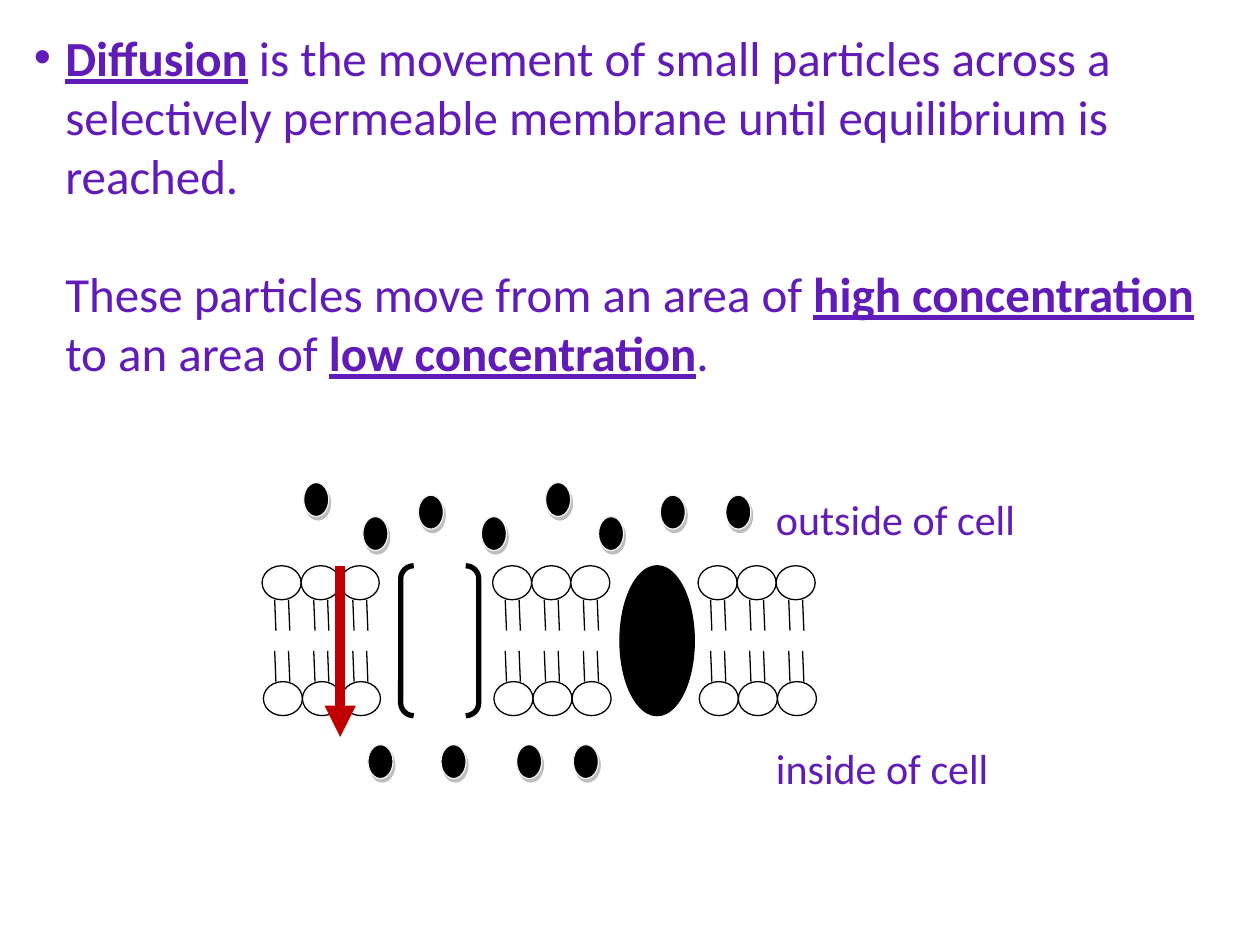
"""Build a slide that explains diffusion across a cell membrane."""
from dataclasses import dataclass

from lxml.etree import SubElement
from pptx import Presentation
from pptx.dml.color import RGBColor
from pptx.enum.shapes import MSO_CONNECTOR, MSO_SHAPE
from pptx.enum.text import MSO_ANCHOR, PP_ALIGN
from pptx.oxml.ns import qn
from pptx.util import Inches, Pt


@dataclass(frozen=True)
class Theme:
    """Colours, font and sizes of the slide."""

    text: str = "611BB8"
    ink: str = "000000"
    paper: str = "FFFFFF"
    rim: str = "F2F2F2"
    shade: str = "7F7F7F"
    arrow: str = "C00000"
    font: str = "Calibri"
    body_size: int = 28
    label_size: int = 24
    thin: float = 0.75
    bracket_line: float = 3
    arrow_line: float = 6


THEME = Theme()


def rgb(color):
    """Return the colour object for a hex string."""
    return RGBColor.from_string(color)


def add_outlined(slide, preset, box, fill, outline, width=THEME.thin):
    """Add a preset shape without a shadow; a fill of None leaves it hollow."""
    shape = slide.shapes.add_shape(preset, *map(Inches, box))
    shape.shadow.inherit = False
    if fill:
        shape.fill.solid()
        shape.fill.fore_color.rgb = rgb(fill)
    else:
        shape.fill.background()
    shape.line.color.rgb = rgb(outline)
    shape.line.width = Pt(width)
    return shape


def add_line(slide, start, end, color=THEME.ink, width=THEME.thin):
    """Add a straight line without a shadow."""
    line = slide.shapes.add_connector(
        MSO_CONNECTOR.STRAIGHT, *map(Inches, (*start, *end)))
    line.line.color.rgb = rgb(color)
    line.line.width = Pt(width)
    SubElement(line._element.spPr, qn("a:effectLst"))
    return line


def style_text(paragraph, size):
    """Give a paragraph the slide's font and text colour."""
    paragraph.font.name = THEME.font
    paragraph.font.size = Pt(size)
    paragraph.font.color.rgb = rgb(THEME.text)


def indent_paragraph(paragraph, bullet):
    """Indent a paragraph and hang a coloured bullet if one is given."""
    properties = paragraph._p.get_or_add_pPr()
    margin = Inches(0.25)
    properties.set("marL", str(margin))
    properties.set("indent", str(-margin if bullet else 0))
    if bullet:
        bullet_color = SubElement(properties, qn("a:buClr"))
        SubElement(bullet_color, qn("a:srgbClr"), val=THEME.text)
        SubElement(properties, qn("a:buFont"), typeface="Arial")
        SubElement(properties, qn("a:buChar"), char=bullet)
    else:
        SubElement(properties, qn("a:buNone"))


def add_definition(slide, box):
    """Write the definition, with its key terms bold and underlined."""
    frame = slide.shapes.add_textbox(*map(Inches, box)).text_frame
    frame.word_wrap = True
    frame.vertical_anchor = MSO_ANCHOR.TOP
    passages = (
        ("•", 0, (
            ("Diffusion", True),
            (" is the movement of small particles across a selectively "
             "permeable membrane until equilibrium is reached.", False))),
        (None, 34, (
            ("These particles move from an area of ", False),
            ("high concentration", True),
            (" to an area of ", False),
            ("low concentration", True),
            (".", False))),
    )
    for index, (bullet, gap, pieces) in enumerate(passages):
        paragraph = frame.add_paragraph() if index else frame.paragraphs[0]
        indent_paragraph(paragraph, bullet)
        paragraph.space_before = Pt(gap)
        style_text(paragraph, THEME.body_size)
        for wording, is_term in pieces:
            run = paragraph.add_run()
            run.text = wording
            run.font.bold = run.font.underline = is_term


def add_lipid(slide, left, head_top, tail_start, tail_end, lean):
    """Draw one lipid: a round head and two leaning tails."""
    add_outlined(slide, MSO_SHAPE.OVAL, (left, head_top, 0.31, 0.27),
                 THEME.paper, THEME.ink)
    for offset in (0.1, 0.21):
        tail = left + offset
        add_line(slide, (tail, tail_start), (tail + lean, tail_end))


def add_bilayer(slide, box):
    """Draw three lipid pairs whose tails face each other inside the box."""
    left, top, width, height = box
    bottom = top + height
    head, tail, lean = 0.27, 0.245, 0.01
    for index in range(3):
        lipid = left + index * width / 3
        add_lipid(slide, lipid, top, top + head, top + head + tail, lean)
        add_lipid(slide, lipid + lean, bottom - head, bottom - head,
                  bottom - head - tail, -lean)


def add_membrane(slide, box):
    """Draw the bilayers, the channel, the protein and the diffusion arrow."""
    left, top, _, height = box
    for offset in (0, 1.83, 3.46):
        add_bilayer(slide, (left + offset, top, 0.93, height))
    add_outlined(slide, MSO_SHAPE.DOUBLE_BRACKET,
                 (left + 1.1, top, 0.62, height),
                 None, THEME.ink, THEME.bracket_line)
    add_outlined(slide, MSO_SHAPE.OVAL, (left + 2.84, top, 0.59, height),
                 THEME.ink, THEME.ink)
    middle = left + 0.62
    arrow = add_line(slide, (middle, top), (middle, top + 1.36),
                     THEME.arrow, THEME.arrow_line)
    SubElement(arrow._element.spPr.find(qn("a:ln")), qn("a:tailEnd"),
               type="triangle")


def add_particle(slide, left, top):
    """Draw one particle with a hard offset shadow."""
    particle = add_outlined(slide, MSO_SHAPE.OVAL, (left, top, 0.2, 0.27),
                            THEME.ink, THEME.rim)
    effects = particle._element.spPr.find(qn("a:effectLst"))
    shadow = SubElement(effects, qn("a:outerShdw"), blurRad="0",
                        dist=str(Pt(2.2)), dir=str(63 * 60000),
                        algn="ctr", rotWithShape="0")
    shade = SubElement(shadow, qn("a:srgbClr"), val=THEME.shade)
    SubElement(shade, qn("a:alpha"), val="50000")


def add_particles(slide, box, offsets):
    """Scatter particles at offsets from the corner of the box."""
    left, top = box[:2]
    for across, down in offsets:
        add_particle(slide, left + across, top + down)


def add_side_label(slide, box, wording):
    """Name one side of the membrane."""
    label = add_outlined(slide, MSO_SHAPE.RECTANGLE, box,
                         THEME.paper, THEME.paper)
    frame = label.text_frame
    frame.vertical_anchor = MSO_ANCHOR.TOP
    paragraph = frame.paragraphs[0]
    paragraph.alignment = PP_ALIGN.LEFT
    style_text(paragraph, THEME.label_size)
    paragraph.add_run().text = wording


def main():
    """Assemble and save the slide."""
    deck = Presentation()
    deck.slide_width, deck.slide_height = Inches(10), Inches(7.5)
    slide = deck.slides.add_slide(deck.slide_layouts[6])
    add_definition(slide, (0.17, 0.17, 9.58, 3.23))
    add_membrane(slide, (2.08, 4.49, 4.39, 1.19))
    high, middle, low = 0, 0.1, 0.27
    add_particles(slide, (2.41, 3.83, 3.55, 0.54), (
        (0, high), (0.47, low), (0.91, middle), (1.41, low),
        (1.92, high), (2.34, low), (2.83, middle), (3.35, middle)))
    add_particles(slide, (2.92, 5.91, 1.83, 0.27), (
        (0, 0), (0.58, 0), (1.18, 0), (1.63, 0)))
    add_side_label(slide, (6.06, 3.87, 2.44, 0.51), "outside of cell")
    add_side_label(slide, (6.06, 5.84, 1.94, 0.51), "inside of cell")
    deck.save("out.pptx")


if __name__ == "__main__":
    main()
